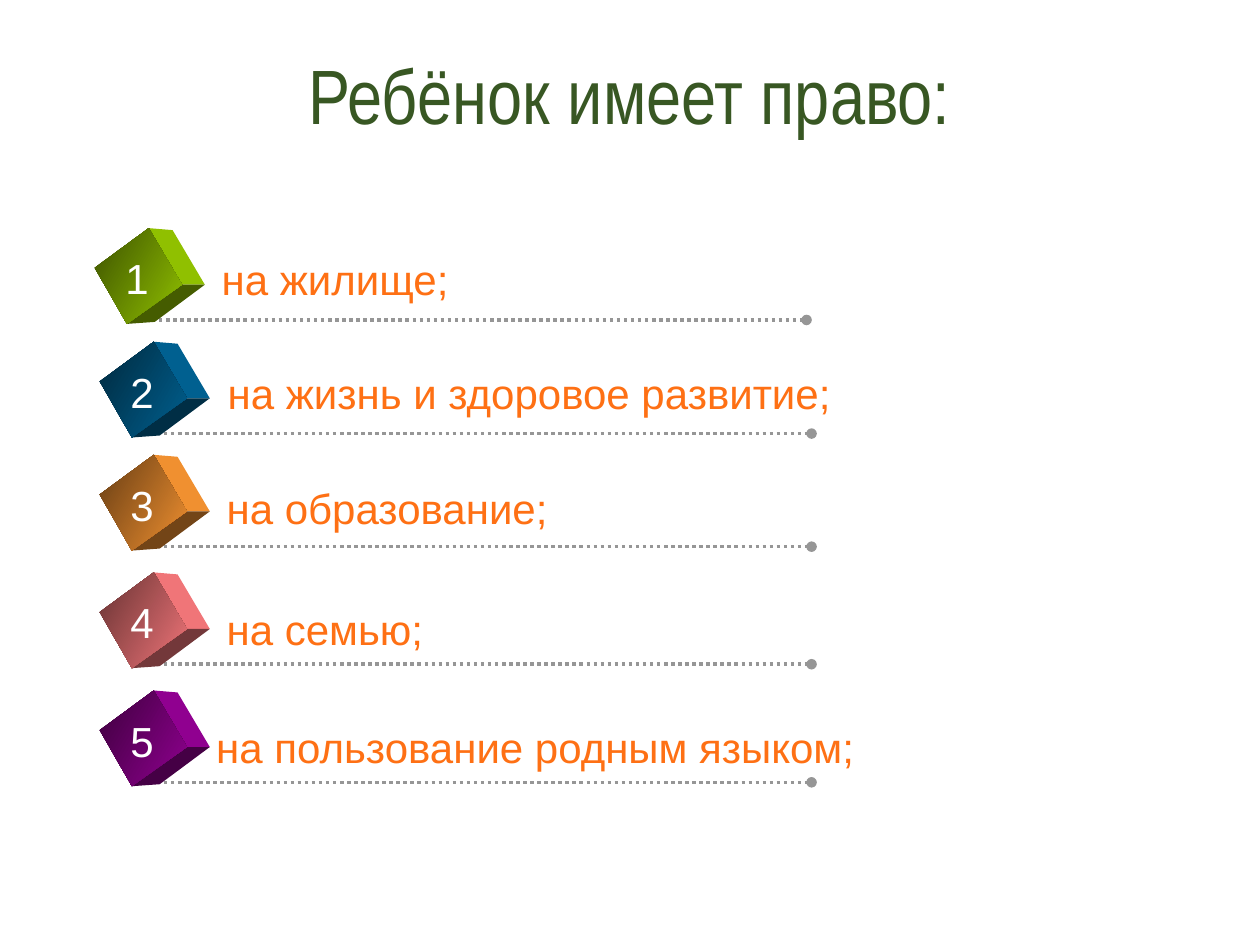
import pptx
import pptx.util
import pptx.dml.color
import pptx.enum.dml
import pptx.enum.shapes
import pptx.enum.text
import pptx.oxml
import pptx.oxml.ns

Cm = pptx.util.Cm
Pt = pptx.util.Pt


def tint(hue, part=1):
    rgb = pptx.dml.color.RGBColor.from_string(hue)
    return pptx.dml.color.RGBColor(*[round(part * c) for c in rgb])


def label(group, text, left, top, width, hue):
    box = group.shapes.add_textbox(Cm(left), Cm(top), Cm(width), Cm(1.28))
    frame = box.text_frame
    frame.text = text
    frame.word_wrap = False
    frame.auto_size = pptx.enum.text.MSO_AUTO_SIZE.SHAPE_TO_FIT_TEXT
    font = frame.paragraphs[0].runs[0].font
    font.name = "Arial"
    font.size = Pt(24)
    font.color.rgb = tint(hue)


deck = pptx.Presentation()
deck.slide_width = Cm(25.4)
deck.slide_height = Cm(19.05)
slide = deck.slides.add_slide(deck.slide_layouts[5])

title = slide.shapes.title
title.left, title.top = Cm(1.75), Cm(0.41)
title.width, title.height = Cm(21.9), Cm(3.2)
title.text_frame.text = "Ребёнок имеет право:"
title.text_frame.vertical_anchor = pptx.enum.text.MSO_ANCHOR.MIDDLE
para = title.text_frame.paragraphs[0]
para.alignment = pptx.enum.text.PP_ALIGN.CENTER
para.line_spacing = 0.9
font = para.runs[0].font
font.name = "Arial Narrow"
font.size = Pt(44)
font.color.rgb = tint("385723")

rights = [
    ("на жилище;", "99CC00", 2.92, 6.45, 4.22, 4.98, 5.13),
    ("на жизнь и здоровое развитие;", "006699", 3.02, 8.74, 4.34, 7.29, 13.03),
    ("на образование;", "FF9933", 3.02, 11.02, 4.32, 9.6, 7.04),
    ("на семью;", "FF7C80", 3.02, 13.39, 4.32, 12.04, 4.52),
    ("на пользование родным языком;", "990099", 3.02, 15.77, 4.11, 14.43, 13.49),
]

west, north, east, south = (-1.01, -1.05), (0.08, -1.85), (0.75, -0.71), (-0.36, 0.08)
back, edge, base = (0.56, -1.81), (1.21, -0.71), (0.2, 0.04)
faces = [
    ("side", 0.94, [north, back, edge, east]),
    ("floor", 0.45, [east, edge, base, south]),
    ("front", 0.94, [west, north, east, south]),
]

for rank, (text, hue, x, y, left, top, width) in enumerate(rights, 1):
    group = slide.shapes.add_group_shape()

    rule = group.shapes.add_connector(
        pptx.enum.shapes.MSO_CONNECTOR.STRAIGHT, Cm(x), Cm(y), Cm(x + 13.34), Cm(y))
    rule.line.color.rgb = tint("969696")
    rule.line.width = Pt(2)
    rule.line.dash_style = pptx.enum.dml.MSO_LINE.ROUND_DOT
    props = rule._element.spPr
    tail = pptx.oxml.parse_xml(
        "<a:tailEnd %s type='oval'/>" % pptx.oxml.ns.nsdecls("a"))
    rule.line._get_or_add_ln().append(tail)
    props.append(pptx.oxml.parse_xml("<a:effectLst %s/>" % pptx.oxml.ns.nsdecls("a")))

    for name, part, spots in faces:
        dots = [(Cm(x + dx), Cm(y + dy)) for dx, dy in spots]
        path = group.shapes.build_freeform(*dots[0])
        path.add_line_segments(dots[1:], close=True)
        face = path.convert_to_shape()
        face.shadow.inherit = False
        face.line.fill.background()
        if name == "front":
            face.fill.gradient()
            face.fill.gradient_angle = 330
            stops = face.fill.gradient_stops
            for stop, shade, place in zip(stops, (0.4, part), (0, 1)):
                stop.color.rgb = tint(hue, shade)
                stop.position = place
        else:
            face.fill.solid()
            face.fill.fore_color.rgb = tint(hue, part)

    label(group, text, left, top, width, "FE7014")
    label(group, str(rank), x - 0.64, y - 1.48, 0.99, "FFFFFF")

deck.save("out.pptx")
